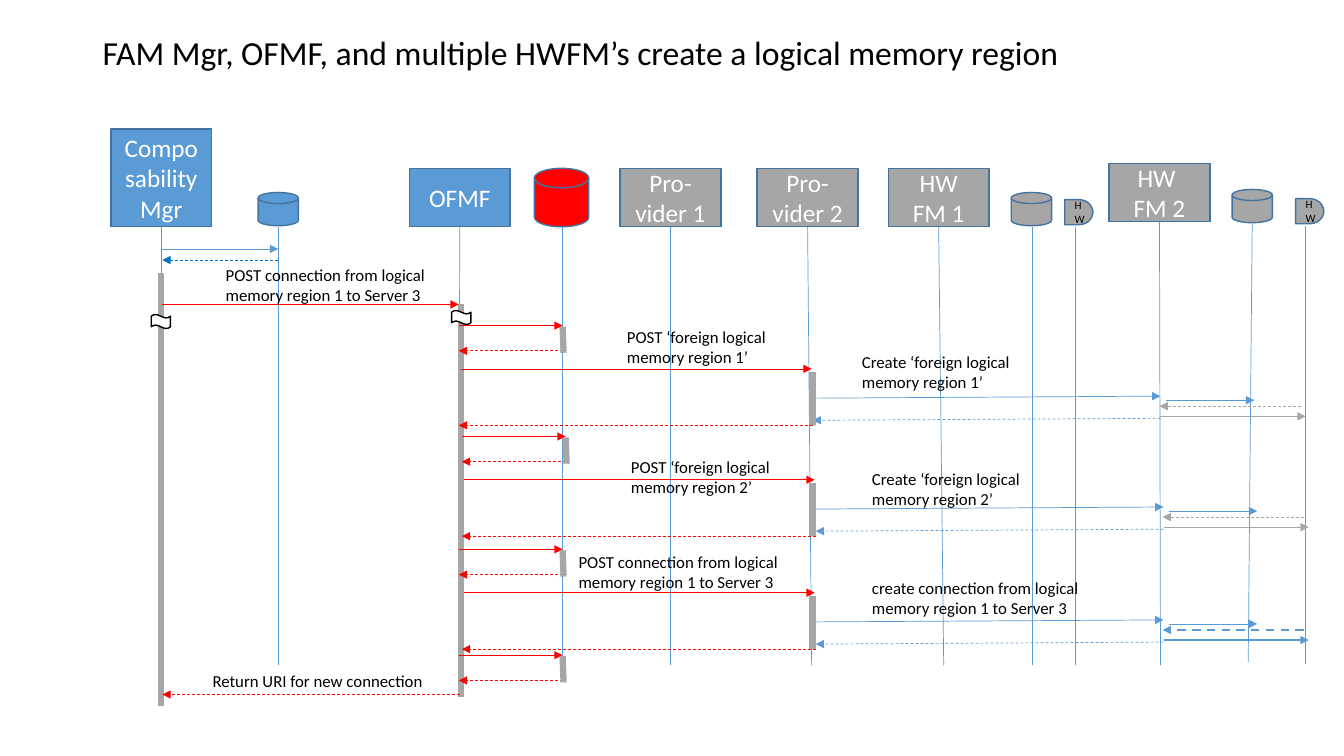
from pptx import Presentation
from pptx.dml.color import RGBColor
from pptx.enum.dml import MSO_LINE
from pptx.enum.shapes import MSO_CONNECTOR, MSO_SHAPE as Kind
from pptx.enum.text import MSO_ANCHOR as Anchor, PP_ALIGN as Align
from pptx.oxml.ns import qn
from pptx.util import Inches, Pt
from lxml.etree import SubElement

BLUE = RGBColor(0x5B, 0x9B, 0xD5)
EDGE = RGBColor(0x43, 0x73, 0x9E)
NAVY = RGBColor(0x00, 0x70, 0xC0)
RED = RGBColor(0xFF, 0x00, 0x00)
GRAY = RGBColor(0xA6, 0xA6, 0xA6)
WHITE = RGBColor(0xFF, 0xFF, 0xFF)
BLACK = RGBColor(0x00, 0x00, 0x00)

deck = Presentation()
deck.slide_width, deck.slide_height = Inches(13.33), Inches(7.5)
slide = deck.slides.add_slide(deck.slide_layouts[6])
shapes = slide.shapes


def link(x1, y1, x2, y2, color, width=0.5, dash=False, head=True):
    """Draw a line, with an arrowhead at its end if asked."""
    ends = [Inches(v) for v in (x1, y1, x2, y2)]
    line = shapes.add_connector(MSO_CONNECTOR.STRAIGHT, *ends)
    line.line.color.rgb = color
    line.line.width = Pt(width)
    if dash:
        line.line.dash_style = MSO_LINE.DASH
    if head:
        SubElement(line.line._get_or_add_ln(), qn("a:tailEnd"), type="triangle")
    SubElement(line._element.spPr, qn("a:effectLst"))


def write(shape, text, size, color, align, anchor):
    """Fill a shape or text box with wrapped text."""
    frame = shape.text_frame
    frame.word_wrap = True
    frame.vertical_anchor = anchor
    frame.text = text
    for para in frame.paragraphs:
        para.alignment = align
        para.font.name = "Calibri"
        para.font.size = Pt(size)
        para.font.color.rgb = color


# Title
title = shapes.add_textbox(Inches(0.92), Inches(0.23), Inches(11.5), Inches(0.62))
write(title, "FAM Mgr, OFMF, and multiple HWFM’s create a logical memory region",
      24, BLACK, Align.LEFT, Anchor.MIDDLE)
title.text_frame.paragraphs[0].line_spacing = 0.9

# Lifelines: top x, top y, foot x, foot y
TOP, FOOT = 2.25, 6.6
for x1, y1, x2, y2 in [
    (1.6, TOP, 1.6, FOOT), (2.76, TOP, 2.76, FOOT), (4.56, TOP, 4.55, FOOT),
    (5.58, TOP, 5.58, FOOT), (6.65, TOP, 6.65, FOOT), (8.01, TOP, 8.05, FOOT),
    (9.31, TOP, 9.36, FOOT), (10.24, TOP, 10.24, FOOT), (10.67, TOP, 10.67, FOOT),
    (11.5, 2.2, 11.51, FOOT), (12.42, 2.22, 12.38, 6.57), (12.95, 2.24, 12.95, 6.59),
]:
    link(x1, y1, x2, y2, BLUE, head=False)

# Long activation bars
link(4.57, 3.02, 4.57, 6.91, GRAY, 4.5, head=False)
link(1.6, 2.71, 1.6, 7, GRAY, 4.5, head=False)

# Actors, stores, devices and break marks
DISK, DELAY = Kind.FLOWCHART_MAGNETIC_DISK, Kind.FLOWCHART_DELAY
for kind, x, y, w, h, fill, edge, text, size, ink in [
    (Kind.RECTANGLE, 1.1, 1.28, 1, 0.97, BLUE, EDGE, "Composability\nMgr", 18, WHITE),
    (Kind.RECTANGLE, 4.06, 1.67, 1, 0.58, BLUE, EDGE, "OFMF", 18, WHITE),
    (Kind.RECTANGLE, 6.15, 1.67, 1, 0.58, GRAY, EDGE, "Pro-vider 1", 18, WHITE),
    (Kind.RECTANGLE, 7.51, 1.67, 1, 0.58, GRAY, EDGE, "Pro-vider 2", 18, WHITE),
    (Kind.RECTANGLE, 8.81, 1.67, 1, 0.58, GRAY, EDGE, "HW\nFM 1", 18, WHITE),
    (Kind.RECTANGLE, 11, 1.62, 1, 0.58, GRAY, EDGE, "HW \nFM 2", 18, WHITE),
    (DISK, 2.56, 1.91, 0.4, 0.33, BLUE, EDGE, "", 18, WHITE),
    (DISK, 5.3, 1.67, 0.54, 0.58, RED, EDGE, "", 18, WHITE),
    (DISK, 10.03, 1.91, 0.4, 0.33, GRAY, EDGE, "", 18, WHITE),
    (DISK, 12.22, 1.88, 0.4, 0.33, GRAY, EDGE, "", 18, WHITE),
    (DELAY, 10.56, 1.98, 0.28, 0.25, GRAY, EDGE, "HW", 8, BLACK),
    (DELAY, 12.85, 1.97, 0.28, 0.25, GRAY, EDGE, "HW", 8, BLACK),
    (Kind.WAVE, 1.5, 3.12, 0.19, 0.14, WHITE, BLACK, "", 18, BLACK),
    (Kind.WAVE, 4.48, 3.08, 0.19, 0.14, WHITE, BLACK, "", 18, BLACK),
]:
    shape = shapes.add_shape(kind, Inches(x), Inches(y), Inches(w), Inches(h))
    shape.shadow.inherit = False
    shape.fill.solid()
    shape.fill.fore_color.rgb = fill
    shape.line.color.rgb = edge
    shape.line.width = Pt(1)
    if text:
        write(shape, text, size, ink, Align.CENTER, Anchor.MIDDLE)

# Manager messages
link(1.61, 2.47, 2.76, 2.47, BLUE)
link(2.76, 2.58, 1.61, 2.58, NAVY, dash=True)
link(1.61, 3.02, 4.55, 3.02, RED)
link(4.56, 6.89, 1.61, 6.89, RED, dash=True)

# Store lookups: start height and shift to the right
for y, dx in [(3.23, 0), (4.33, 0.03), (5.45, 0), (6.5, 0)]:
    near, far = 4.55 + dx, 5.58 + dx
    link(near, y, far, y, RED)
    link(far, y + 0.25, near, y + 0.25, RED, dash=True)
    link(far, y + 0.01, far + 0.01, y + 0.27, GRAY, 4.5, head=False)

# Provider calls: start height, shift, device colour and width
for y, dx, tint, width in [(3.66, 0, GRAY, 0.5), (4.76, 0.03, GRAY, 0.5),
                           (5.88, 0.03, BLUE, 1.5)]:
    prov, fab = 8.06 + dx, 11.51 + dx
    link(4.57 + dx, y, prov - 0.01, y, RED)
    link(prov, y + 0.29, fab, y + 0.27, BLUE)
    link(fab, y + 0.49, prov, y + 0.51, BLUE, dash=True)
    link(fab + 0.05, y + 0.31, fab + 0.93, y + 0.31, BLUE)
    link(fab + 1.39, y + 0.37, fab - 0.01, y + 0.37, tint, width, dash=True)
    link(fab, y + 0.47, fab + 1.44, y + 0.47, tint, width)
    link(8.06, y + 0.03, 8.06, y + 0.56, GRAY, 4.5, head=False)
    link(prov, y + 0.56, 4.55 + dx, y + 0.56, RED, dash=True)

# Message labels
for x, y, w, h, text in [
    (2.14, 2.58, 2.35, 0.5, "POST connection from logical memory region 1 to Server 3"),
    (6.12, 3.19, 1.76, 0.5, "POST ‘foreign logical memory region 1’"),
    (8.45, 3.44, 1.76, 0.5, "Create ‘foreign logical memory region 1’"),
    (6.16, 4.48, 1.76, 0.5, "POST ‘foreign logical memory region 2’"),
    (8.55, 4.6, 1.76, 0.5, "Create ‘foreign logical memory region 2’"),
    (5.64, 5.42, 2.35, 0.5, "POST connection from logical memory region 1 to Server 3"),
    (8.55, 5.68, 2.35, 0.5, "create connection from logical memory region 1 to Server 3"),
    (2.01, 6.61, 2.35, 0.3, "Return URI for new connection"),
]:
    label = shapes.add_textbox(Inches(x), Inches(y), Inches(w), Inches(h))
    write(label, text, 12, BLACK, Align.LEFT, Anchor.TOP)

deck.save("out.pptx")
